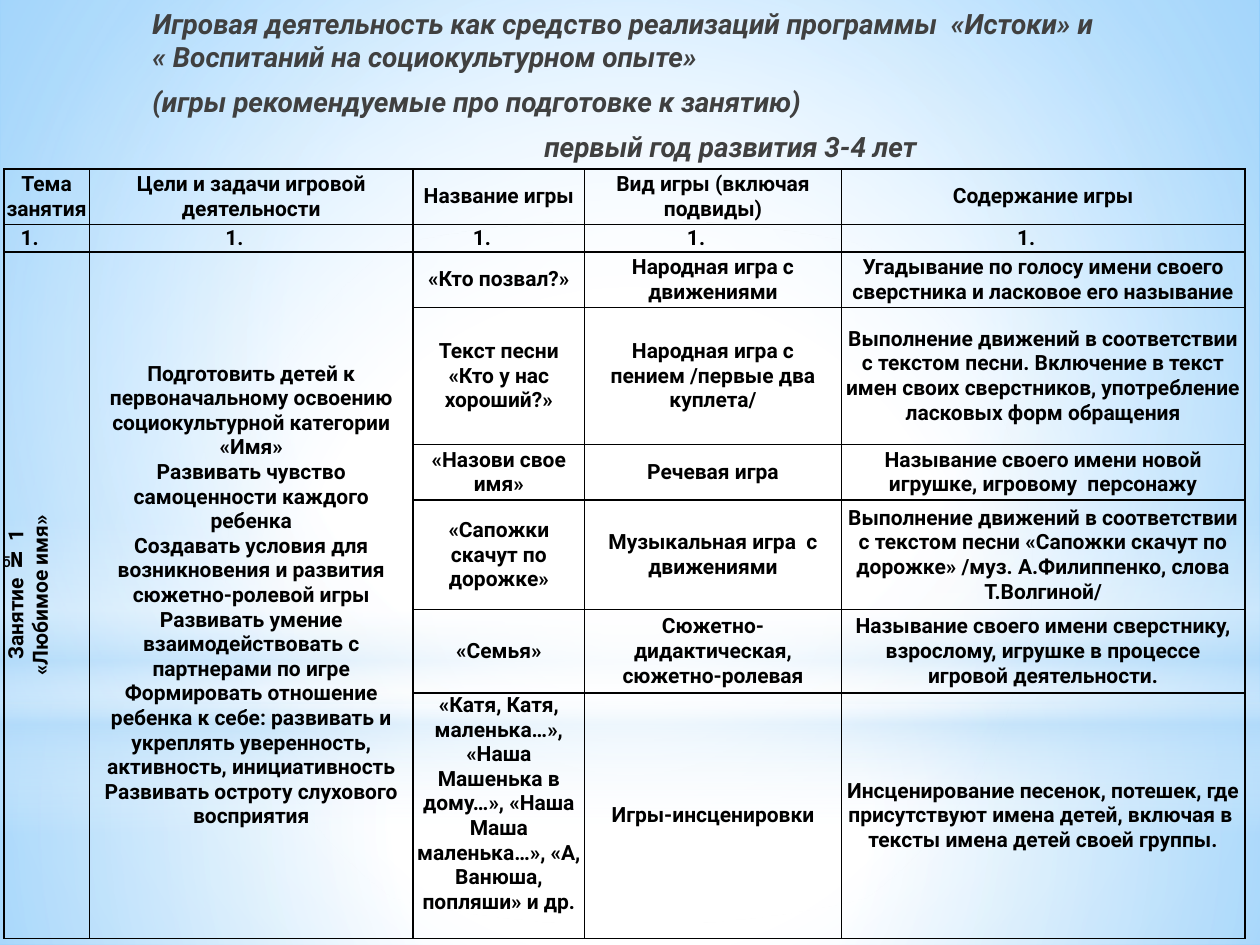
from lxml import etree
from pptx import Presentation
from pptx.dml.color import RGBColor
from pptx.enum.shapes import MSO_SHAPE
from pptx.enum.text import MSO_ANCHOR, MSO_AUTO_SIZE, PP_ALIGN
from pptx.oxml.ns import qn
from pptx.util import Inches, Pt

RECTANGLE, OVAL = MSO_SHAPE.RECTANGLE, MSO_SHAPE.OVAL
TOP, MIDDLE = MSO_ANCHOR.TOP, MSO_ANCHOR.MIDDLE
LEFT, CENTER = PP_ALIGN.LEFT, PP_ALIGN.CENTER
NO_AUTOFIT = MSO_AUTO_SIZE.NONE

COLORS = {"white": "FFFFFF", "sky": "63BCFF", "pale": "B4DCFA",
          "heading": "404040", "text": "000000", "border": "000000"}

BACKGROUND = {"stops": [(0, "white", 100), (42, "white", 100), (100, "sky", 100)],
              "focus": (24, 44, 24, 12)}
CENTERED = (50, 50, 50, 50)
DECORATION = [
    (RECTANGLE, (0, 5.58, 10, 1.92),
     {"stops": [(0, "white", 91), (37, "white", 76), (100, "pale", 79)], "focus": CENTERED}),
    (RECTANGLE, (0, 0, 10, 5.58),
     {"stops": [(0, "white", 89), (48, "white", 62), (100, "pale", 79)], "focus": CENTERED}),
    (RECTANGLE, (0, 4.12, 10, 2.5),
     {"stops": [(0, "white", 0), (29, "white", 30), (45, "pale", 40),
                (55, "white", 26), (65, "pale", 60), (100, "white", 0)]}),
    (OVAL, (0, 1.75, 10, 5.58),
     {"stops": [(0, "white", 100), (56, "white", 0)], "focus": CENTERED}),
]

HEADING_BOX = (1.06, 0, 7.77, 1.26)
HEADING = [
    ("Игровая деятельность как средство реализаций программы  «Истоки» и "
     "« Воспитаний на социокультурном опыте»", 0.05),
    ("(игры рекомендуемые про подготовке к занятию)", 0.05),
    ("первый год развития 3-4 лет", 3.16),
]
HEADING_FONT = {"name": "Roboto", "size": Pt(16), "bold": True, "italic": True}
HEADING_PARAGRAPH = {"alignment": LEFT, "space_before": Pt(3.5), "space_after": Pt(3)}

TABLE_POSITION = (0.03, 1.34)
COLUMN_WIDTHS = [0.68, 2.57, 1.36, 2.04, 3.2]
ROW_HEIGHTS = [0.44, 0.22, 0.44, 1.09, 0.44, 0.87, 0.66, 1.95]
HEADERS = ["Тема занятия", "Цели и задачи игровой деятельности", "Название игры",
           "Вид игры (включая подвиды)", "Содержание игры"]
LESSON = ["Занятие № 1", "«Любимое имя»"]
GOALS = [
    "Подготовить детей к первоначальному освоению социокультурной категории «Имя»",
    "Развивать чувство самоценности каждого ребенка",
    "Создавать условия для возникновения и развития сюжетно-ролевой игры",
    "Развивать умение взаимодействовать с партнерами по игре",
    "Формировать отношение ребенка к себе: развивать и укреплять уверенность, "
    "активность, инициативность",
    "Развивать остроту слухового восприятия",
]
GAMES = [
    ("«Кто позвал?»", "Народная игра с движениями",
     "Угадывание по голосу имени своего сверстника и ласковое его называние"),
    ("Текст песни «Кто у нас хороший?»", "Народная игра с пением /первые два куплета/",
     "Выполнение движений в соответствии с текстом песни. Включение в текст имен "
     "своих сверстников, употребление ласковых форм обращения"),
    ("«Назови свое имя»", "Речевая игра",
     "Называние своего имени новой игрушке, игровому  персонажу"),
    ("«Сапожки скачут по дорожке»", "Музыкальная игра  с движениями",
     "Выполнение движений в соответствии с текстом песни «Сапожки скачут по дорожке» "
     "/муз. А.Филиппенко, слова Т.Волгиной/"),
    ("«Семья»", "Сюжетно-дидактическая, сюжетно-ролевая",
     "Называние своего имени сверстнику, взрослому, игрушке в процессе игровой деятельности."),
    ("«Катя, Катя, маленька…», «Наша Машенька в дому…», «Наша Маша маленька…», "
     "«А, Ванюша, попляши» и др.", "Игры-инсценировки",
     "Инсценирование песенок, потешек, где присутствуют имена детей, включая в  тексты "
     "имена детей своей группы."),
]
CELL_FONT = {"name": "Roboto", "size": Pt(12), "bold": True}
CELL_FORMAT = {"vertical_anchor": MIDDLE, "margin_left": Inches(0.02),
               "margin_right": Inches(0.02), "margin_top": 0, "margin_bottom": 0}
NUMBER_FORMAT = {"margin_right": Inches(0.29)}
LAST_GAME_FORMAT = {"margin_bottom": Inches(0.19)}


def apply_format(target, values):
    for name, value in values.items():
        setattr(target, name, value)


def add_child(parent, tag, **attributes):
    child = etree.SubElement(parent, qn(tag))
    for name, value in attributes.items():
        child.set(name, str(value))
    return child


def paint_gradient(fill, owner, stops, focus=None):
    fill.background()
    placeholder_fill = next(owner.iter(qn("a:noFill")))
    gradient = etree.Element(qn("a:gradFill"), rotWithShape="1")
    stop_list = add_child(gradient, "a:gsLst")
    for position, color, opacity in stops:
        stop = add_child(stop_list, "a:gs", pos=position * 1000)
        color_element = add_child(stop, "a:srgbClr", val=COLORS[color])
        if opacity < 100:
            add_child(color_element, "a:alpha", val=opacity * 1000)
    if focus:
        circle = add_child(gradient, "a:path", path="circle")
        sides = {side: share * 1000 for side, share in zip("ltrb", focus)}
        add_child(circle, "a:fillToRect", **sides)
    else:
        add_child(gradient, "a:lin", ang=90 * 60000, scaled=0)
    placeholder_fill.getparent().replace(placeholder_fill, gradient)


def write_paragraphs(text_frame, texts, font, color, paragraph_format):
    for index, text in enumerate(texts):
        paragraph = text_frame.paragraphs[0] if index == 0 else text_frame.add_paragraph()
        apply_format(paragraph, paragraph_format)
        run = paragraph.add_run()
        run.text = text
        apply_format(run.font, font)
        run.font.color.rgb = RGBColor.from_string(COLORS[color])


def add_decoration(slide):
    paint_gradient(slide.background.fill, slide.element, **BACKGROUND)
    for kind, box, gradient in DECORATION:
        shape = slide.shapes.add_shape(kind, *map(Inches, box))
        shape.shadow.inherit = False
        paint_gradient(shape.fill, shape.element, **gradient)
        shape.line.fill.background()


def add_heading(slide):
    title = slide.shapes.title.element
    title.getparent().remove(title)
    body = slide.placeholders[1]
    body.element.getparent().append(body.element)
    apply_format(body, dict(zip(("left", "top", "width", "height"), map(Inches, HEADING_BOX))))
    apply_format(body.text_frame, {"word_wrap": True, "vertical_anchor": TOP,
                                   "auto_size": NO_AUTOFIT})
    write_paragraphs(body.text_frame, [text for text, _ in HEADING],
                     HEADING_FONT, "heading", HEADING_PARAGRAPH)
    for paragraph, (_, indent) in zip(body.text_frame.paragraphs, HEADING):
        properties = paragraph._p.get_or_add_pPr()
        properties.set("marL", str(Inches(indent)))
        properties.set("indent", "0")
        add_child(properties, "a:buNone")


def add_borders(cell):
    properties = cell._tc.get_or_add_tcPr()
    for index, tag in enumerate(("a:lnL", "a:lnR", "a:lnT", "a:lnB")):
        line = add_child(properties, tag, w=Pt(1))
        add_child(add_child(line, "a:solidFill"), "a:srgbClr", val=COLORS["border"])
        properties.insert(index, line)


def add_games_table(slide):
    size = sum(COLUMN_WIDTHS), sum(ROW_HEIGHTS)
    frame = slide.shapes.add_table(len(ROW_HEIGHTS), len(COLUMN_WIDTHS),
                                   *map(Inches, TABLE_POSITION + size))
    table = frame.table
    apply_format(table, {"first_row": False, "horz_banding": False})
    for column, width in zip(table.columns, COLUMN_WIDTHS):
        column.width = Inches(width)
    for row, height in zip(table.rows, ROW_HEIGHTS):
        row.height = Inches(height)

    rows = [[[text] for text in HEADERS], [["1."]] * len(HEADERS)]
    for index, game in enumerate(GAMES):
        merged = [LESSON, GOALS] if index == 0 else [[], []]
        rows.append(merged + [[text] for text in game])
    for row_index, row in enumerate(rows):
        spacing = {"space_before": Pt(6)} if row_index == 0 else {}
        for column_index, texts in enumerate(row):
            cell = table.cell(row_index, column_index)
            apply_format(cell, CELL_FORMAT)
            if row_index == 1:
                apply_format(cell, NUMBER_FORMAT)
            cell.fill.background()
            add_borders(cell)
            write_paragraphs(cell.text_frame, texts, CELL_FONT, "text",
                             {"alignment": CENTER, **spacing})
    for column_index in (0, 1):
        table.cell(2, column_index).merge(table.cell(len(rows) - 1, column_index))
    table.cell(2, 0)._tc.get_or_add_tcPr().set("vert", "vert270")
    apply_format(table.cell(len(rows) - 1, 2), LAST_GAME_FORMAT)


def main():
    presentation = Presentation()
    presentation.slide_width, presentation.slide_height = Inches(10), Inches(7.5)
    slide = presentation.slides.add_slide(presentation.slide_layouts[1])
    add_decoration(slide)
    add_heading(slide)
    add_games_table(slide)
    presentation.save("out.pptx")


if __name__ == "__main__":
    main()
